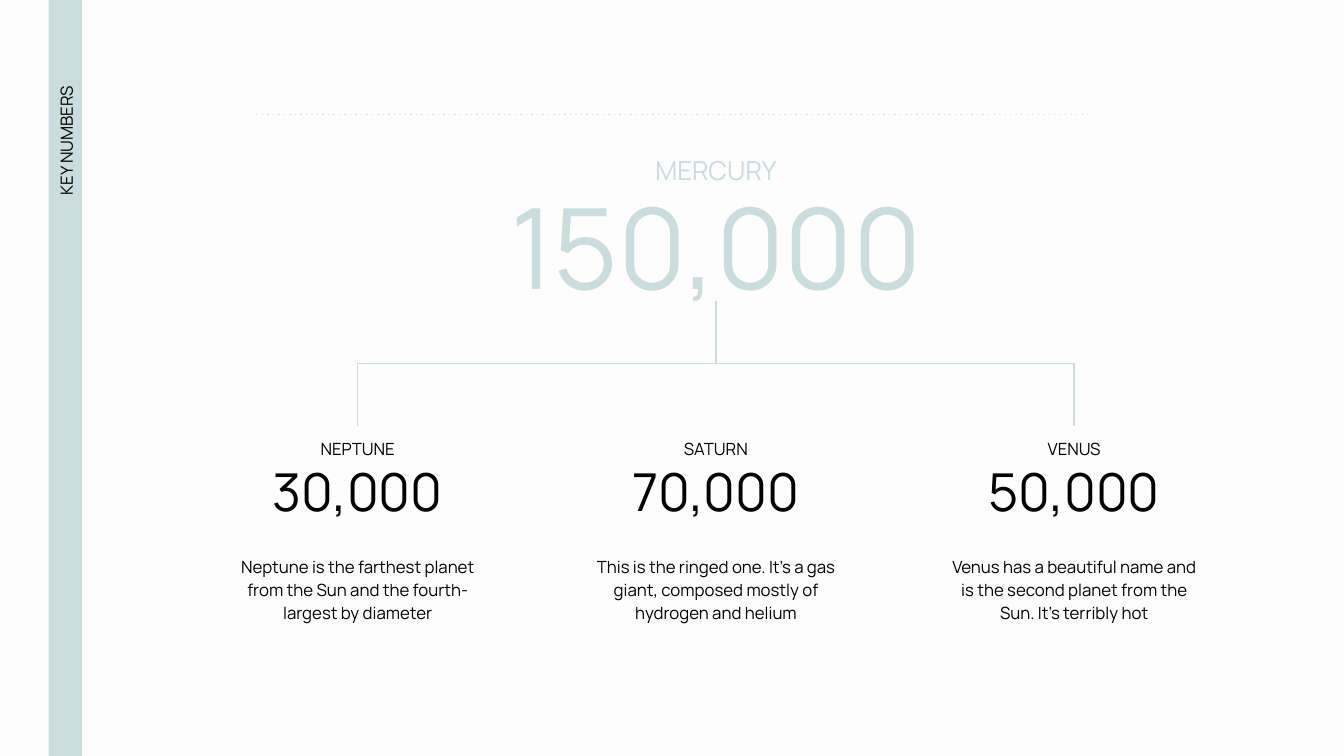
from dataclasses import dataclass

from lxml import etree
from pptx import Presentation
from pptx import util as u
from pptx.dml.color import RGBColor
from pptx.enum import dml, shapes, text
from pptx.oxml.ns import qn


@dataclass(frozen=True)
class Theme:
    font: str = "Manrope"
    background: RGBColor = RGBColor(0xFD, 0xFD, 0xFD)
    accent: RGBColor = RGBColor(0xCA, 0xDC, 0xDC)
    ink: RGBColor = RGBColor(0, 0, 0)
    small: int = 9
    label: int = 14
    number: int = 28
    hero: int = 60
    line: float = 0.75


THEME = Theme()
CENTER = 13.53
COLUMN_STEP = 6.77
PARENT_BOTTOM, CHILD_TOP = 5.69, 8.05
PLANETS = [
    ("NEPTUNE", "30,000",
     "Neptune is the farthest planet from the Sun and the fourth-largest by diameter"),
    ("SATURN", "70,000",
     "This is the ringed one. It’s a gas giant, composed mostly of hydrogen and helium"),
    ("VENUS", "50,000",
     "Venus has a beautiful name and is the second planet from the Sun. It’s terribly hot"),
]


def write(sp, content, size=THEME.small, color=THEME.ink, align=text.PP_ALIGN.CENTER,
          anchor=text.MSO_ANCHOR.TOP, line_spacing=1.0, space_after=0):
    tf = sp.text_frame
    tf.word_wrap = True
    tf.auto_size = text.MSO_AUTO_SIZE.NONE
    tf.vertical_anchor = anchor
    tf.margin_left = tf.margin_right = tf.margin_top = tf.margin_bottom = u.Cm(0.25)
    p = tf.paragraphs[0]
    p.alignment = align
    p.line_spacing = line_spacing
    p.space_after = u.Pt(space_after)
    r = p.add_run()
    r.text = content
    r.font.name = THEME.font
    r.font.size = u.Pt(size)
    r.font.color.rgb = color


def add_centered_text(s, content, center, top, width, height, **fmt):
    sp = s.shapes.add_textbox(u.Cm(center - width / 2), u.Cm(top), u.Cm(width), u.Cm(height))
    write(sp, content, **fmt)


def add_side_title(s, content):
    bar = s.shapes.add_shape(shapes.MSO_SHAPE.RECTANGLE,
                             u.Cm(0.92), u.Cm(-0.13), u.Cm(0.63), u.Cm(14.55))
    bar.shadow.inherit = False
    bar.fill.solid()
    bar.fill.fore_color.rgb = THEME.accent
    bar.line.fill.background()

    title = s.shapes.title
    title.left, title.top, title.width, title.height = (
        u.Cm(-4.73), u.Cm(7.06), u.Cm(11.96), u.Cm(0.58))
    title.rotation = 270
    write(title, content, align=text.PP_ALIGN.RIGHT, anchor=text.MSO_ANCHOR.MIDDLE)
    # The bar lies behind the title
    bar._element.addnext(title._element)


def add_line(s, kind, x1, y1, x2, y2):
    c = s.shapes.add_connector(kind, u.Cm(x1), u.Cm(y1), u.Cm(x2), u.Cm(y2))
    c.line.color.rgb = THEME.accent
    c.line.width = u.Pt(THEME.line)
    etree.SubElement(c._element.spPr, qn("a:effectLst"))
    return c


def add_branch(s, child_x):
    """Elbow that leaves the child upwards: a quarter-turned horizontal elbow."""
    mid_x, mid_y = (child_x + CENTER) / 2, (PARENT_BOTTOM + CHILD_TOP) / 2
    half_w, half_h = (CHILD_TOP - PARENT_BOTTOM) / 2, abs(child_x - CENTER) / 2
    side = 1 if child_x > CENTER else -1
    c = add_line(s, shapes.MSO_CONNECTOR.ELBOW, mid_x + side * half_w, mid_y - half_h,
                 mid_x - side * half_w, mid_y + half_h)
    angle = 90 if side > 0 else 270
    c._element.spPr.find(qn("a:xfrm")).set("rot", str(angle * 60000))


def add_dotted_rule(s):
    c = add_line(s, shapes.MSO_CONNECTOR.STRAIGHT, 20.57, 2.16, 4.83, 2.16)
    c.line.dash_style = dml.MSO_LINE.ROUND_DOT
    c._element.xpath(".//a:prstDash")[0].set("val", "dot")


def add_planet(s, center, name, number, description):
    add_centered_text(s, number, center, 8.43, 6.4, 2.57, size=THEME.number)
    add_centered_text(s, name, center, 8.05, 5.18, 0.89)
    add_centered_text(s, description, center, 10.21, 5.28, 1.02,
                      line_spacing=1.15, space_after=16)


def main():
    prs = Presentation()
    prs.slide_width, prs.slide_height = u.Cm(25.4), u.Cm(14.29)
    s = prs.slides.add_slide(prs.slide_layouts[5])
    s.background.fill.solid()
    s.background.fill.fore_color.rgb = THEME.background

    add_side_title(s, "KEY NUMBERS")
    add_dotted_rule(s)
    add_centered_text(s, "MERCURY", CENTER, 2.67, 5.18, 0.89,
                      size=THEME.label, color=THEME.accent)
    add_centered_text(s, "150,000", CENTER, 3.1, 15.82, 2.57,
                      size=THEME.hero, color=THEME.accent)
    for side in (-1, 1):
        add_branch(s, CENTER + side * COLUMN_STEP)
    for i, planet in enumerate(PLANETS):
        add_planet(s, CENTER + (i - 1) * COLUMN_STEP, *planet)

    prs.save("out.pptx")


if __name__ == "__main__":
    main()
